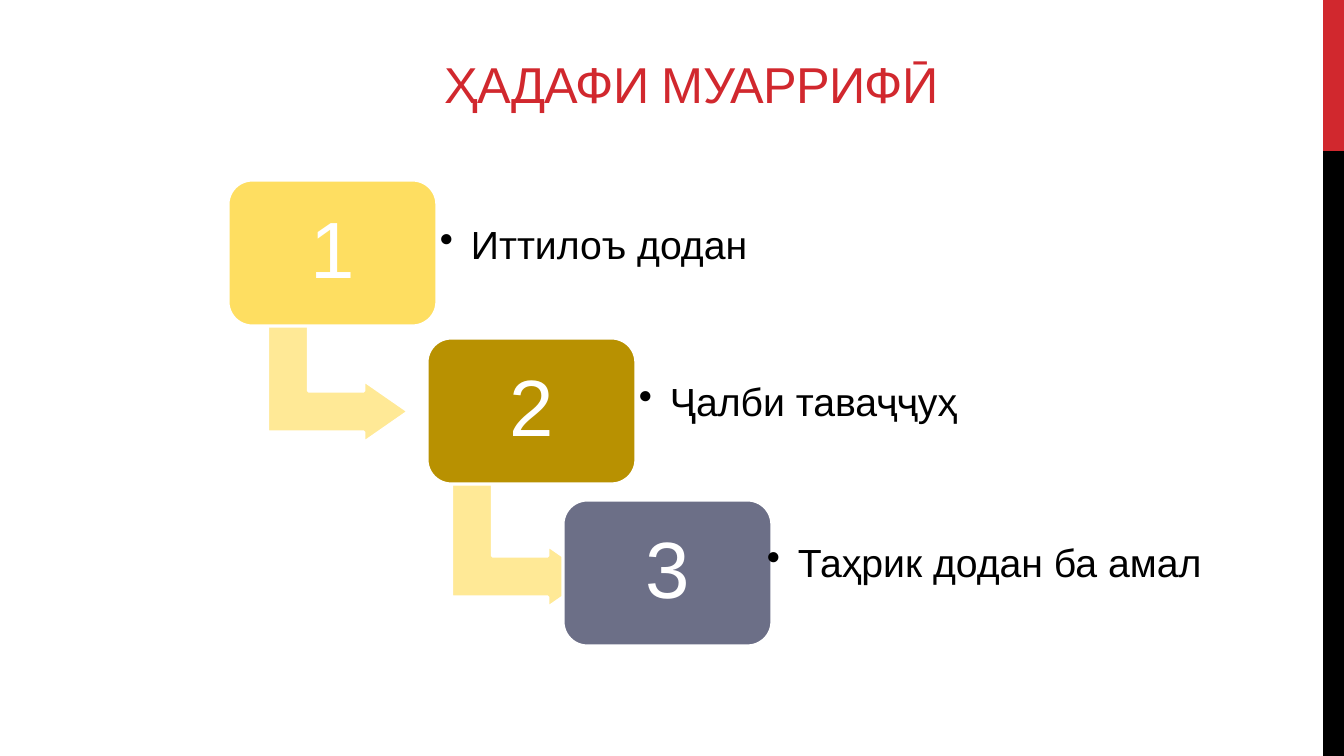
from pptx import Presentation
from pptx.dml.color import RGBColor
from pptx.enum.shapes import MSO_SHAPE as Shape
from pptx.enum.text import MSO_ANCHOR as Anchor, PP_ALIGN as Align
from pptx.oxml.ns import qn
from pptx.util import Pt
from lxml.etree import SubElement

RED = RGBColor(0xD1, 0x28, 0x2E)
BLACK = RGBColor(0, 0, 0)
WHITE = RGBColor(0xFF, 0xFF, 0xFF)
PALE_YELLOW = RGBColor(0xFF, 0xE9, 0x96)
YELLOW = RGBColor(0xFE, 0xDE, 0x61)
GOLD = RGBColor(0xB8, 0x91, 0x01)
SLATE = RGBColor(0x6C, 0x6F, 0x87)
SCALE = 914400 / 100.8


def px(*values):
    return [round(value * SCALE) for value in values]


def add_block(kind, place, color, outlined=True):
    block = page.shapes.add_shape(kind, *px(*place))
    block.shadow.inherit = False
    block.fill.solid()
    block.fill.fore_color.rgb = color
    if outlined:
        block.line.color.rgb = WHITE
        block.line.width = Pt(2.25)
    else:
        block.line.fill.background()
    return block


def write(frame, text, size, color, align, anchor, inset):
    frame.word_wrap = True
    frame.vertical_anchor = anchor
    margin, = px(inset)
    frame.margin_left = frame.margin_right = margin
    frame.margin_top = frame.margin_bottom = margin
    para = frame.paragraphs[0]
    para.alignment = align
    span = para.add_run()
    span.text = text
    span.font.name = "Arial"
    span.font.size = Pt(size)
    span.font.color.rgb = color
    return para


deck = Presentation()
deck.slide_width, deck.slide_height = px(1344, 756)
page = deck.slides.add_slide(deck.slide_layouts[6])

# Side bar
add_block(Shape.RECTANGLE, (1323, 0, 21, 151), RED, outlined=False)
add_block(Shape.RECTANGLE, (1323, 151, 21, 605), BLACK, outlined=False)

# Title, with a wider right margin that moves it slightly left
title = page.shapes.add_textbox(*px(280, 17, 851, 102)).text_frame
heading = write(title, "ҲАДАФИ МУАРРИФӢ", 36, RED, Align.CENTER, Anchor.BOTTOM, 5)
title.margin_left, title.margin_right = px(10, 38)
heading.runs[0].font._element.set("spc", "-60")

# Steps: card corner, card color, arrow corner, label place, label inset, label
steps = [
    ((228, 180), YELLOW, (276, 310), (428, 188, 434, 118), 12, "Иттилоъ додан"),
    ((427, 338), GOLD, (460, 475), (624, 344, 614, 120), 15, "Ҷалби таваҷҷуҳ"),
    ((563, 500), SLATE, None, (752, 506, 499, 118), 15, "Таҳрик додан ба амал"),
]
for number, (corner, color, arrow_corner, place, inset, text) in enumerate(steps, 1):
    # Arrow to the next step
    if arrow_corner:
        arrow = add_block(Shape.BENT_UP_ARROW, (*arrow_corner, 124, 141), PALE_YELLOW)
        arrow.rotation = 90
        for index, ratio in enumerate((0.33, 0.25, 0.36)):
            arrow.adjustments[index] = ratio

    # Numbered card
    card = add_block(Shape.ROUNDED_RECTANGLE, (*corner, 209, 146), color)
    digit = write(card.text_frame, str(number), 57, WHITE, Align.CENTER, Anchor.MIDDLE, 24)
    digit.line_spacing = 0.9

    # Bulleted label
    label = page.shapes.add_textbox(*px(*place)).text_frame
    item = write(label, text, 28, BLACK, Align.LEFT, Anchor.MIDDLE, inset)
    item.line_spacing = 0.9
    indent, = px(31)
    properties = item._p.get_or_add_pPr()
    properties.set("marL", str(indent))
    properties.set("indent", str(-indent))
    SubElement(properties, qn("a:buChar"), char="•")

deck.save("out.pptx")
